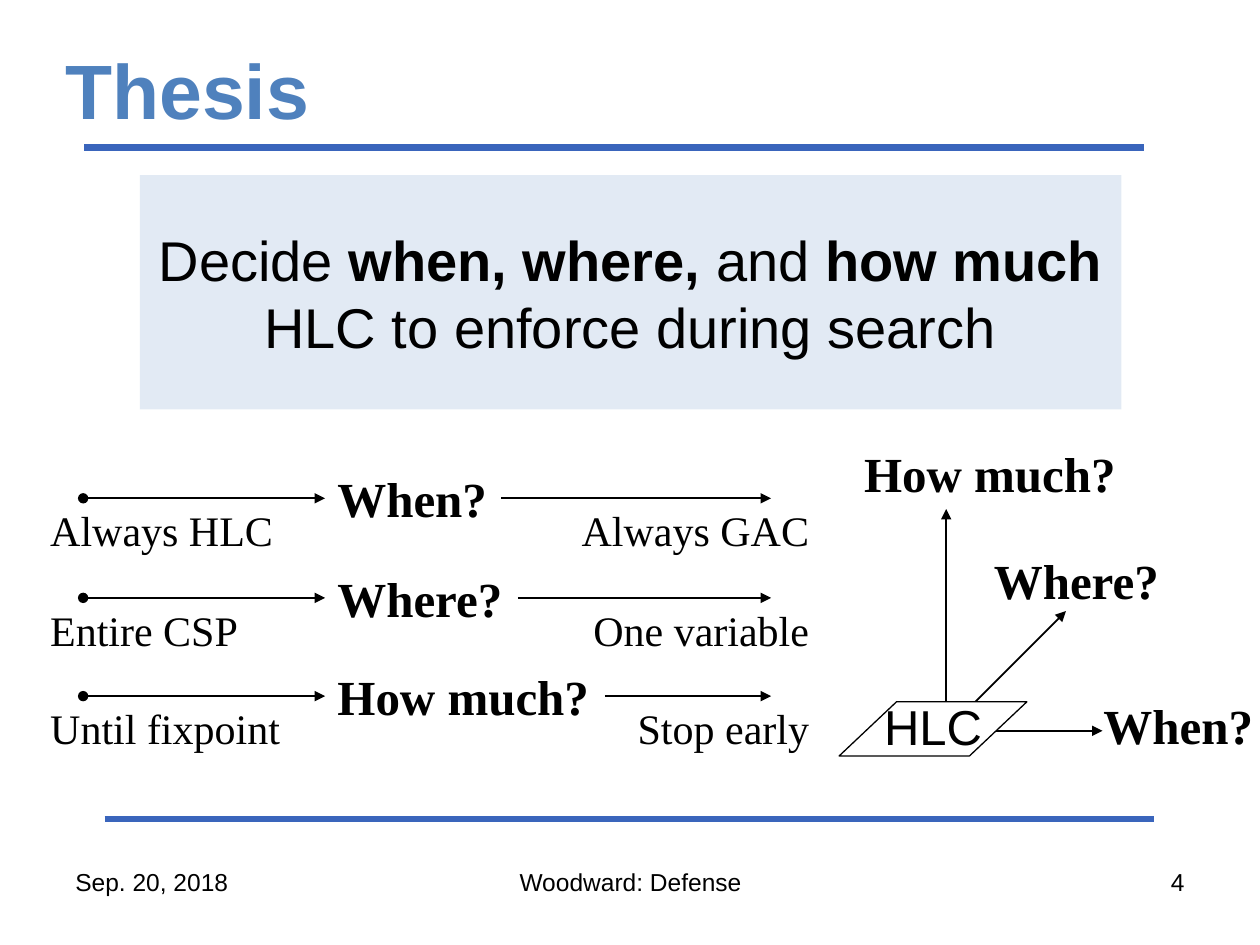
from lxml import etree
from pptx import Presentation
from pptx.dml.color import RGBColor
from pptx.enum.shapes import MSO_CONNECTOR, MSO_SHAPE
from pptx.enum.text import MSO_ANCHOR, MSO_AUTO_SIZE, PP_ALIGN
from pptx.oxml.ns import qn
from pptx.util import Inches, Pt

BLACK = RGBColor(0x00, 0x00, 0x00)
WHITE = RGBColor(0xFF, 0xFF, 0xFF)
TITLE_BLUE = RGBColor(0x4F, 0x81, 0xBD)
RULE_BLUE = RGBColor(0x3A, 0x65, 0xBC)
SANS, SERIF = "Arial", "Times New Roman"
LEFT, CENTER, RIGHT = PP_ALIGN.LEFT, PP_ALIGN.CENTER, PP_ALIGN.RIGHT
LEFT_SIDE, RIGHT_SIDE = 1, 3

HEADING_LEFT, HEADING_HEIGHT = 2.58, 0.57
CAPTION_WIDTH = 2.21
CAPTION_RIGHT = 6.52

# top, heading, heading width, caption at the left, caption at the right
QUESTIONS = [
    (3.67, "When?", 1.4, "Always HLC", "Always GAC"),
    (4.46, "Where?", 1.53, "Entire CSP", "One variable"),
    (5.24, "How much?", 2.22, "Until fixpoint", "Stop early"),
]
# arrow tip, heading, heading left, top and width
AXES = [
    ((8.75, 5.8), "When?", 8.66, 5.47, 1.4),
    ((7.51, 4.04), "How much?", 6.76, 3.47, 2.22),
    ((8.46, 4.85), "Where?", 7.79, 4.32, 1.53),
]
AXES_ORIGIN = (7.51, 5.8)


def write(shape, text, size=24, font=SANS, color=BLACK, bold=False,
          align=LEFT, anchor=MSO_ANCHOR.TOP, wrap=True):
    """Fill a shape with text; a list of strings alternates plain and bold."""
    frame = shape.text_frame
    frame.word_wrap = wrap
    frame.vertical_anchor = anchor
    if not wrap:
        frame.auto_size = MSO_AUTO_SIZE.SHAPE_TO_FIT_TEXT
    paragraph = frame.paragraphs[0]
    paragraph.alignment = align
    for index, part in enumerate([text] if isinstance(text, str) else text):
        run = paragraph.add_run()
        run.text = part
        run.font.size = Pt(size)
        run.font.name = font
        run.font.color.rgb = color
        run.font.bold = bold or index % 2 == 1


class SlideBuilder:
    def __init__(self, slide):
        self.slide = slide

    def text(self, box, text, **style):
        shape = self.slide.shapes.add_textbox(*map(Inches, box))
        write(shape, text, **style)
        return shape

    def heading(self, left, top, width, text):
        return self.text((left, top, width, HEADING_HEIGHT), text,
                         size=28, font=SERIF, bold=True, wrap=False)

    def caption(self, left, top, text, align):
        self.text((left, top, CAPTION_WIDTH, 0.5), text, font=SERIF, align=align)

    def shape(self, kind, box, fill, line=None, opacity=None):
        shape = self.slide.shapes.add_shape(kind, *map(Inches, box))
        shape.shadow.inherit = False
        shape.fill.solid()
        shape.fill.fore_color.rgb = fill
        if opacity is not None:
            color = shape.fill._xPr.find(".//" + qn("a:srgbClr"))
            etree.SubElement(color, qn("a:alpha"), val=str(opacity * 1000))
        if line is None:
            shape.line.fill.background()
        else:
            shape.line.color.rgb = line
            shape.line.width = Pt(0.75)
        return shape

    def line(self, start, end, color=BLACK, width=1, head=None, tail=None):
        connector = self.slide.shapes.add_connector(
            MSO_CONNECTOR.STRAIGHT, *map(Inches, (*start, *end)))
        connector.line.color.rgb = color
        connector.line.width = Pt(width)
        line_xml = connector.line._get_or_add_ln()
        for tag, kind in (("a:headEnd", head), ("a:tailEnd", tail)):
            if kind:
                etree.SubElement(line_xml, qn(tag), type=kind)
        etree.SubElement(connector._element.spPr, qn("a:effectLst"))
        return connector

    def arrow(self, start, end, head=None):
        return self.line(start, end, head=head, tail="triangle")

    def question_row(self, top, question, width, left_caption, right_caption):
        middle = top + HEADING_HEIGHT / 2
        heading = self.heading(HEADING_LEFT, top, width, question)
        arrow_in = self.arrow((0.66, middle), (HEADING_LEFT, middle), head="oval")
        arrow_in.end_connect(heading, LEFT_SIDE)
        arrow_out = self.arrow((HEADING_LEFT + width, middle), (6.12, middle))
        arrow_out.begin_connect(heading, RIGHT_SIDE)
        self.caption(0.3, middle, left_caption, LEFT)
        self.caption(CAPTION_RIGHT - CAPTION_WIDTH, middle, right_caption, RIGHT)


def main():
    presentation = Presentation()
    presentation.slide_width, presentation.slide_height = Inches(10), Inches(7.5)
    builder = SlideBuilder(presentation.slides.add_slide(presentation.slide_layouts[6]))

    builder.line((0.83, 6.5), (9.16, 6.5), RULE_BLUE, 4)
    builder.line((0.67, 1.17), (9.08, 1.17), RULE_BLUE, 4)
    builder.text((0.42, 0.33, 9, 0.75), "Thesis", size=44, color=TITLE_BLUE,
                 bold=True, anchor=MSO_ANCHOR.MIDDLE)
    for left, width, text, align in ((0.5, 2.33, "Sep. 20, 2018", LEFT),
                                     (3.42, 3.17, "Woodward: Defense", CENTER),
                                     (7.17, 2.33, "4", RIGHT)):
        builder.text((left, 6.83, width, 0.52), text, size=14, align=align)

    statement = builder.shape(MSO_SHAPE.RECTANGLE, (1.11, 1.39, 7.79, 1.86),
                              TITLE_BLUE, opacity=16)
    write(statement, ["Decide ", "when, where, ", "and", " how much ",
                      "HLC to enforce during search"],
          size=32, align=CENTER, anchor=MSO_ANCHOR.MIDDLE)

    for tip, question, left, top, width in AXES:
        builder.arrow(AXES_ORIGIN, tip)
        builder.heading(left, top, width, question)
    plane = builder.shape(MSO_SHAPE.PARALLELOGRAM, (6.66, 5.57, 1.49, 0.43),
                          WHITE, line=BLACK)
    plane.adjustments[0] = 1.06
    frame = plane.text_frame
    frame.margin_left = frame.margin_right = frame.margin_top = 0
    frame.margin_bottom = Inches(0.05)
    write(plane, "HLC", size=28, align=CENTER, anchor=MSO_ANCHOR.MIDDLE)

    for row in QUESTIONS:
        builder.question_row(*row)

    presentation.save("out.pptx")


if __name__ == "__main__":
    main()
